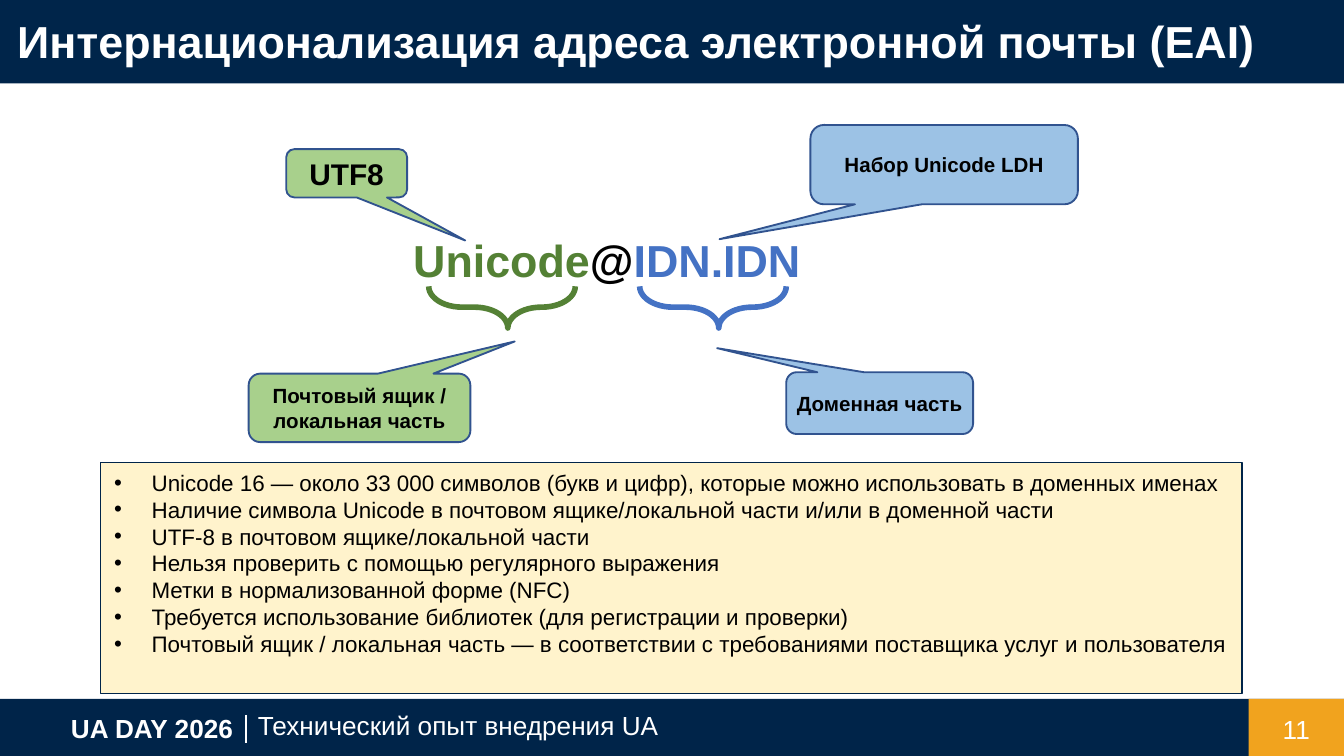
from lxml import etree
from pptx import Presentation
from pptx import util as u
from pptx.dml.color import RGBColor
from pptx.enum import shapes, text
from pptx.oxml.ns import qn

NAVY = RGBColor(0x00, 0x24, 0x49)
TITLE_NAVY = RGBColor(0x00, 0x25, 0x4A)
ORANGE = RGBColor(0xF1, 0xA3, 0x1E)
CREAM = RGBColor(0xFF, 0xF3, 0xCC)
LIGHT_GREEN = RGBColor(0xA8, 0xD0, 0x8C)
LIGHT_BLUE = RGBColor(0x9C, 0xC2, 0xE5)
GREEN = RGBColor(0x54, 0x81, 0x35)
BLUE = RGBColor(0x44, 0x72, 0xC4)
OUTLINE = RGBColor(0x31, 0x53, 0x8F)
WHITE = RGBColor(0xFF, 0xFF, 0xFF)
BLACK = RGBColor(0x00, 0x00, 0x00)

COLUMNS, ROWS = 100, 56.25
CELL = u.Inches(0.1)
SHAPE = shapes.MSO_SHAPE
CENTER = text.PP_ALIGN.CENTER
MIDDLE = text.MSO_ANCHOR.MIDDLE


def cells(*counts):
    return [round(n * CELL) for n in counts]


class Slide:
    """Draws on one slide; every position is in grid columns and rows."""

    font = "Arial"

    def __init__(self, prs):
        self.s = prs.slides.add_slide(prs.slide_layouts[6])

    def add_text(self, sp, runs, size, bold=False, align=None, anchor=None, inset=(1, 1)):
        """Fill the first paragraph with (words, colour) runs."""
        tf = sp.text_frame
        tf.word_wrap = True
        tf.margin_left = tf.margin_right = round(inset[0] * CELL)
        tf.margin_top = tf.margin_bottom = round(inset[1] * CELL)
        tf.vertical_anchor = anchor or text.MSO_ANCHOR.TOP
        p = tf.paragraphs[0]
        p.alignment = align or text.PP_ALIGN.LEFT
        for words, color in runs:
            r = p.add_run()
            r.text = words
            self.style(r.font, size, color, bold)
        return p

    def style(self, font, size, color, bold=False):
        font.name, font.size, font.bold = self.font, u.Pt(size), bold
        font.color.rgb = color

    def shape(self, kind, at, fill=None, line=None, width=1.0):
        sp = self.s.shapes.add_shape(kind, *cells(*at))
        sp.shadow.inherit = False
        if fill is None:
            sp.fill.background()
        else:
            sp.fill.solid()
            sp.fill.fore_color.rgb = fill
        if line is None:
            sp.line.fill.background()
        else:
            sp.line.color.rgb = line
            sp.line.width = u.Pt(width)
        return sp

    def label(self, at, runs, size, **options):
        return self.add_text(self.s.shapes.add_textbox(*cells(*at)), runs, size, **options)

    def divider(self, col, top, bottom):
        cx = self.s.shapes.add_connector(
            shapes.MSO_CONNECTOR.STRAIGHT, *cells(col, top, col, bottom))
        cx.line.color.rgb = WHITE
        cx.line.width = u.Pt(1.5)
        etree.SubElement(cx._element.spPr, qn("a:effectLst"))

    def callout(self, at, tip, fill, words, size=11, side=1):
        """Rounded balloon; tip is its offset from the centre in shares of its size."""
        sp = self.shape(SHAPE.ROUNDED_RECTANGULAR_CALLOUT, at, fill, OUTLINE)
        sp.adjustments[0], sp.adjustments[1] = tip
        sp.adjustments[2] = 0.17
        self.add_text(sp, [(words, BLACK)], size, bold=True, align=CENTER,
                      anchor=MIDDLE, inset=(side, 0.5))

    def brace(self, col, color):
        """Brace pointing down, opened under the address."""
        sp = self.shape(SHAPE.LEFT_BRACE, (col, 17.4, 3.1, 10.9), line=color, width=3)
        sp.rotation = 270
        sp.adjustments[0], sp.adjustments[1] = 0.8, 0.54

    def bullets(self, at, items, size):
        sp = self.shape(SHAPE.RECTANGLE, at, CREAM, NAVY, 0.75)
        tf = sp.text_frame
        tf.word_wrap = True
        tf.vertical_anchor = text.MSO_ANCHOR.TOP
        tf.margin_right = u.Inches(0.05)
        tf.text = "\n".join(items)
        for p in tf.paragraphs:
            p.alignment = text.PP_ALIGN.LEFT
            p.line_spacing = u.Pt(14.4)
            pPr = p._p.get_or_add_pPr()
            indent = u.Inches(0.28)
            pPr.set("marL", str(indent))
            pPr.set("indent", str(-indent))
            etree.SubElement(pPr, qn("a:buFont"), typeface=self.font)
            etree.SubElement(pPr, qn("a:buChar"), char="•")
            for r in p.runs:
                self.style(r.font, size, BLACK)


def main():
    prs = Presentation()
    prs.slide_width, prs.slide_height = cells(COLUMNS, ROWS)
    s = Slide(prs)

    footer_top, footer_height, page_col = 52, 4.25, 92.9
    page_at = (page_col, footer_top, COLUMNS - page_col, footer_height)
    s.shape(SHAPE.RECTANGLE, (0, footer_top, COLUMNS, footer_height), NAVY)
    s.shape(SHAPE.RECTANGLE, page_at, ORANGE)
    s.shape(SHAPE.RECTANGLE, (0, 0, COLUMNS, 6.2), TITLE_NAVY)
    s.label((page_col, 52.1, 7.1, 4.3), [("11", WHITE)], 14, align=CENTER, anchor=MIDDLE)
    topic = s.label((18.2, 52.6, 75.4, 3.7), [("Технический опыт внедрения UA", WHITE)], 14)
    topic.line_spacing = 0.7
    s.divider(18.3, 53.2, 55.3)
    s.label((4.3, 52, 15.4, 4.4), [("UA DAY 2026", WHITE)], 14, bold=True)
    s.label((0.3, 0, 95.6, 6.1),
            [("Интернационализация адреса электронной почты (EAI)", WHITE)], 24, bold=True)

    s.label((23.8, 16.8, 42.7, 5),
            [("Unicode", GREEN), ("@", BLACK), ("IDN.IDN", BLUE)],
            24, bold=True, align=CENTER, inset=(1, 0.5))
    s.callout((21.3, 11.1, 9, 3.6), (0.98, 1.39), LIGHT_GREEN, "UTF8", size=16)
    s.callout((60.3, 9.3, 19.9, 5.9), (-0.84, 0.94), LIGHT_BLUE, "Набор Unicode LDH")
    s.brace(35.8, GREEN)
    s.brace(51.5, BLUE)
    s.callout((18.5, 27.8, 16.5, 5.1), (0.7, -0.97), LIGHT_GREEN,
              "Почтовый ящик / локальная часть")
    s.callout((58.5, 27.7, 13.9, 4.6), (-0.87, -0.89), LIGHT_BLUE, "Доменная часть", side=0)

    s.bullets((7.5, 34.4, 84.9, 17.2), [
        "Unicode 16 — около 33 000 символов (букв и цифр), которые можно использовать в доменных именах",
        "Наличие символа Unicode в почтовом ящике/локальной части и/или в доменной части",
        "UTF-8 в почтовом ящике/локальной части",
        "Нельзя проверить с помощью регулярного выражения",
        "Метки в нормализованной форме (NFC)",
        "Требуется использование библиотек (для регистрации и проверки)",
        "Почтовый ящик / локальная часть — в соответствии с требованиями поставщика услуг и пользователя",
    ], 12)

    prs.save("out.pptx")


if __name__ == "__main__":
    main()
